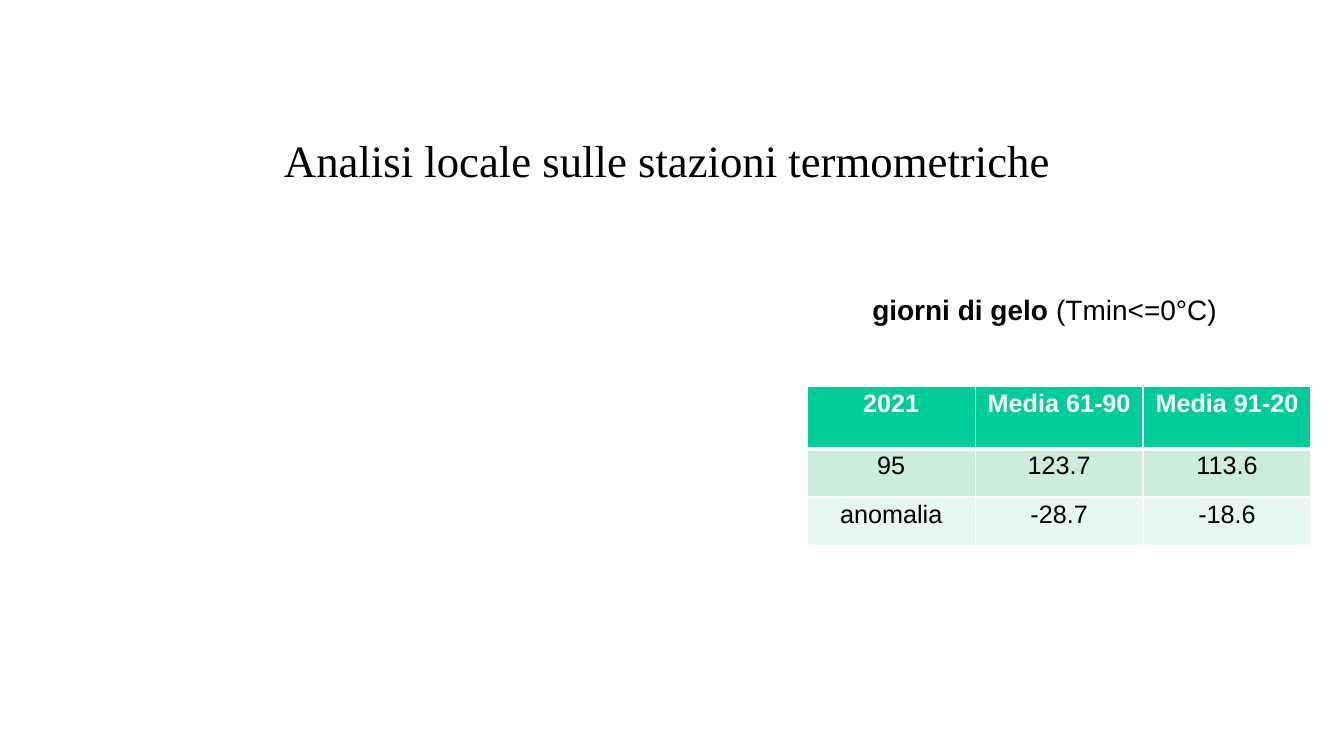
from pptx import Presentation
from pptx.dml.color import RGBColor
from pptx.enum import text
from pptx.oxml import parse_xml
from pptx.oxml import ns
from pptx.util import Pt


def color(value):
    """Turn a hex string into a colour."""
    return RGBColor.from_string(value)


def write(para, content, font="Arial", size=18, ink="000000", bold=False):
    """Add a formatted span of text to a paragraph."""
    span = para.add_run()
    span.text = content
    span.font.name = font
    span.font.size = Pt(size)
    span.font.bold = bold
    span.font.color.rgb = color(ink)


class Slide:
    """Hold the table style and the current page."""

    def __init__(self, page):
        """Keep the page and the style of its table."""
        self.page = page
        self.row_fills = ["00CC99", "CCECDE", "E7F6EF"]
        self.border = "FFFFFF"
        self.spacing = 0.93

    def text_box(self, left, top, width, height, spans, margins=None,
                 align=text.PP_ALIGN.LEFT, anchor=text.MSO_ANCHOR.TOP, spacing=None):
        """Add a text box with one paragraph of spans."""
        frame = self.page.shapes.add_textbox(Pt(left), Pt(top), Pt(width), Pt(height)).text_frame
        frame.word_wrap = True
        frame.vertical_anchor = anchor
        if margins:
            (frame.margin_left, frame.margin_top,
             frame.margin_right, frame.margin_bottom) = map(Pt, margins)
        para = frame.paragraphs[0]
        para.alignment = align
        para.line_spacing = spacing
        for content, style in spans:
            write(para, content, **style)

    def edge(self, cell, side, width):
        """Draw one border of a cell."""
        cell._tc.get_or_add_tcPr().append(parse_xml(
            f'<a:{side} {ns.nsdecls("a")} w="{Pt(width)}"><a:solidFill>'
            f'<a:srgbClr val="{self.border}"/></a:solidFill></a:{side}>'))

    def table(self, left, top, column_width, heights, rows):
        """Add a table with a bold header row."""
        grid = self.page.shapes.add_table(
            len(rows), len(rows[0]), Pt(left), Pt(top),
            Pt(column_width * len(rows[0])), Pt(sum(heights))).table
        for column in grid.columns:
            column.width = Pt(column_width)
        for i, values in enumerate(rows):
            grid.rows[i].height = Pt(heights[i])
            header = i == 0
            for j, value in enumerate(values):
                cell = grid.cell(i, j)
                for side in ("lnL", "lnR", "lnT", "lnB"):
                    thick = (header and side == "lnB") or (i == 1 and side == "lnT")
                    self.edge(cell, side, 3 if thick else 1)
                cell.fill.solid()
                cell.fill.fore_color.rgb = color(self.row_fills[i])
                para = cell.text_frame.paragraphs[0]
                para.alignment = text.PP_ALIGN.CENTER
                para.line_spacing = self.spacing
                write(para, value, ink="FFFFFF" if header else "000000", bold=header)


def main():
    """Build the slide on frost days."""
    deck = Presentation()
    deck.slide_width, deck.slide_height = Pt(960.48), Pt(540)
    slide = Slide(deck.slides.add_slide(deck.slide_layouts[6]))
    slide.text_box(
        20.9, 88.6, 912.2, 45.4,
        [("Analisi locale sulle stazioni termometriche", {"font": "Times New Roman", "size": 32})],
        margins=(0, 6.4, 0, 0), align=text.PP_ALIGN.CENTER)
    slide.text_box(
        616.3, 207.4, 277.9, 29.5,
        [("giorni di gelo ", {"size": 20, "bold": True}), ("(Tmin<=0°C)", {"size": 20})],
        anchor=text.MSO_ANCHOR.MIDDLE, spacing=slide.spacing)
    slide.table(576.9, 276, 120, [44.5, 34.5, 34.5], [
        ["2021", "Media 61-90", "Media 91-20"],
        ["95", "123.7", "113.6"],
        ["anomalia", "-28.7", "-18.6"],
    ])
    deck.save("out.pptx")


if __name__ == "__main__":
    main()
